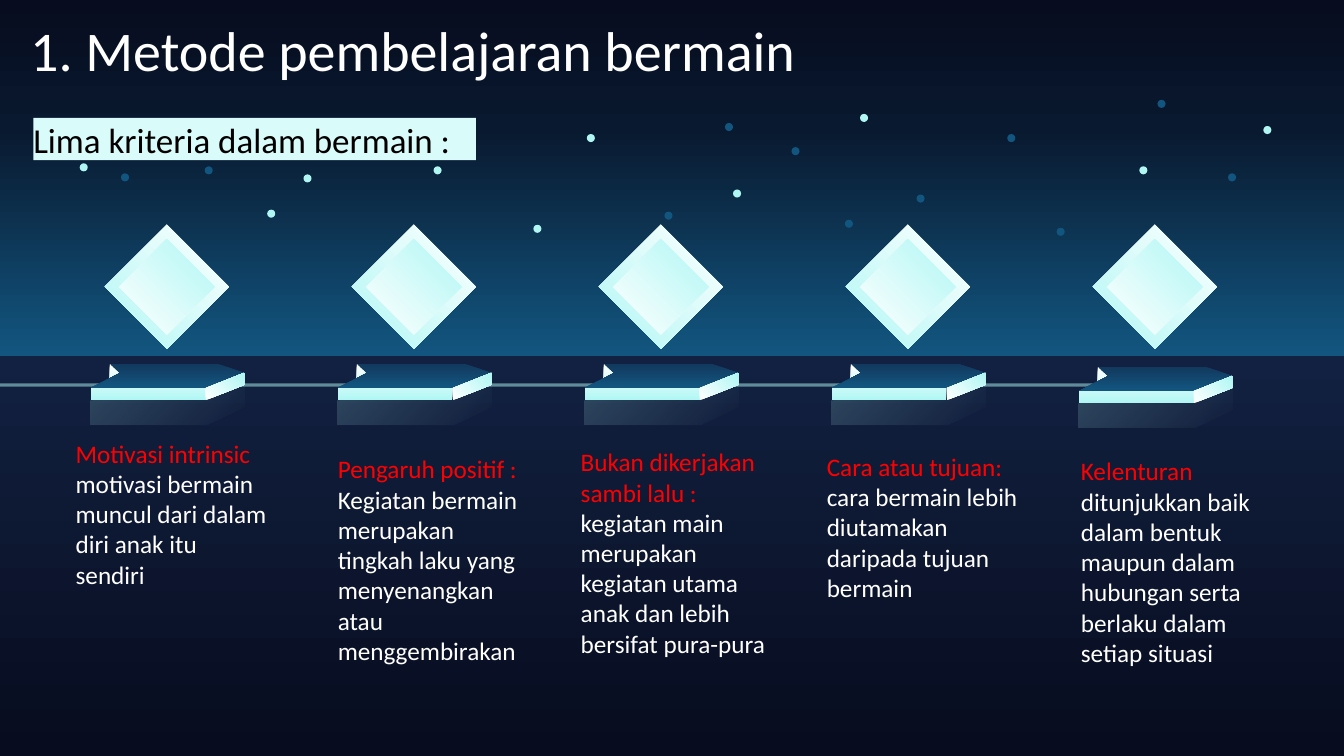
from lxml import etree
from pptx import Presentation
from pptx.dml.color import RGBColor
from pptx.enum.shapes import MSO_CONNECTOR, MSO_SHAPE
from pptx.enum.text import MSO_ANCHOR, MSO_AUTO_SIZE, PP_ALIGN
from pptx.oxml.ns import qn
from pptx.util import Inches, Pt

RECT, OVAL = MSO_SHAPE.RECTANGLE, MSO_SHAPE.OVAL
STRAIGHT = MSO_CONNECTOR.STRAIGHT
MIDDLE, LEFT, GROW = MSO_ANCHOR.MIDDLE, PP_ALIGN.LEFT, MSO_AUTO_SIZE.SHAPE_TO_FIT_TEXT

WHITE, BLACK, RED = "FFFFFF", "000000", "FF0000"
AQUA, PALE, BLUE, NAVY = "B0F7F4", "D9FBFA", "125680", "070C1E"
ICE = [(0, WHITE), (100, AQUA)]


def rgb(value):
    return RGBColor.from_string(value)


def add_alpha(clr, percent):
    etree.SubElement(clr, qn("a:alpha"), val=str(percent * 1000))


class Deck:
    font = "Calibri"

    def __init__(self, prs):
        self.s = prs.slides.add_slide(prs.slide_layouts[6])
        self.shapes = self.s.shapes

    def group(self):
        """Send the next shapes to a new group."""
        self.shapes = self.s.shapes.add_group_shape().shapes

    def ungroup(self):
        self.shapes = self.s.shapes

    def paint(self, sp, fill, angle=90):
        """Fill with a colour, or with gradient stops at a clockwise angle."""
        sp.shadow.inherit = False
        sp.line.fill.background()
        if isinstance(fill, str):
            sp.fill.solid()
            sp.fill.fore_color.rgb = rgb(fill)
            return
        sp.fill.gradient()
        sp.fill.gradient_angle = (360 - angle) % 360
        stops = sp._element.spPr.find(qn("a:gradFill")).find(qn("a:gsLst"))
        for old in list(stops):
            stops.remove(old)
        for pos, color, *alpha in fill:
            gs = etree.SubElement(stops, qn("a:gs"), pos=str(pos * 1000))
            clr = etree.SubElement(gs, qn("a:srgbClr"), val=color)
            for percent in alpha:
                add_alpha(clr, percent)

    def shape(self, kind, x, y, w, h, fill, angle=90, rotation=0):
        sp = self.shapes.add_shape(kind, Inches(x), Inches(y), Inches(w), Inches(h))
        sp.rotation = rotation
        self.paint(sp, fill, angle)
        return sp

    def outline(self, x, y, points, fill, angle):
        """Closed polygon whose points are offsets from (x, y)."""
        pts = [(Inches(x + dx), Inches(y + dy)) for dx, dy in points]
        fb = self.shapes.build_freeform(*pts[0])
        fb.add_line_segments(pts[1:], close=True)
        self.paint(fb.convert_to_shape(), fill, angle)

    def line(self, x1, y1, x2, y2, color, width, opacity):
        c = self.shapes.add_connector(STRAIGHT, Inches(x1), Inches(y1), Inches(x2), Inches(y2))
        c.line.color.rgb, c.line.width = rgb(color), Pt(width)
        spPr = c._element.spPr
        add_alpha(next(spPr.iter(qn("a:srgbClr"))), opacity)
        etree.SubElement(spPr, qn("a:effectLst"))

    def put_text(self, sp, paragraphs, size):
        """Each paragraph is a list of (text, colour) runs."""
        tf = sp.text_frame
        frame = dict(word_wrap=True, auto_size=GROW, vertical_anchor=MIDDLE,
                     margin_left=0, margin_right=0, margin_top=0, margin_bottom=0)
        for name, value in frame.items():
            setattr(tf, name, value)
        for i, runs in enumerate(paragraphs):
            p = tf.add_paragraph() if i else tf.paragraphs[0]
            p.alignment = LEFT
            for text, color in runs:
                r = p.add_run()
                r.text = text
                for name, value in dict(name=self.font, size=Pt(size)).items():
                    setattr(r.font, name, value)
                r.font.color.rgb = rgb(color)

    def text(self, x, y, w, h, paragraphs, size):
        sp = self.shapes.add_textbox(Inches(x), Inches(y), Inches(w), Inches(h))
        self.put_text(sp, paragraphs, size)


STARS = {
    AQUA: [(2.65, 2.08), (5.29, 2.23), (5.82, 1.33), (0.79, 1.62), (3.01, 1.73), (4.3, 1.65),
           (12.53, 1.25), (7.27, 1.88), (11.3, 1.65), (8.53, 1.13)],
    BLUE: [(2.03, 1.65), (8.38, 2.18), (6.59, 2.1), (10.48, 2.26), (1.2, 1.72), (7.19, 1.22),
           (12.18, 1.72), (11.48, 0.99), (9.99, 1.33), (7.85, 1.46), (9.09, 1.93)],
}

# Faces of a platform: points, gradient stops, angle
PLATFORM = [
    ([(1.52, 0.21), (1.52, 0.42), (1.14, 0.6), (0, 0.6), (0, 0.36)],
     [(0, AQUA, 0), (100, AQUA, 20)], 225),
    ([(0.19, 0), (0.19, 0.16), (0, 0.24), (0, 0.36), (1.14, 0.36), (1.14, 0.24)], ICE, 90),
    ([(0.19, 0), (1.26, 0), (1.52, 0.09), (1.14, 0.24), (0, 0.24), (0.29, 0.09)],
     [(0, "12395E"), (100, BLUE)], 90),
    ([(1.52, 0.09), (1.52, 0.21), (1.14, 0.36), (1.14, 0.24)], ICE, 315),
]

# Platform top, text left, text top, text height, paragraphs
CRITERIA = [
    (3.61, 0.75, 4.34, 1.51, [
        [("Motivasi intrinsic", RED)],
        [("motivasi bermain muncul dari dalam diri anak itu sendiri", WHITE)]]),
    (3.61, 3.35, 4.49, 2.12, [
        [("Pengaruh positif : ", RED),
         ("Kegiatan bermain merupakan tingkah laku yang menyenangkan atau menggembirakan", WHITE)]]),
    (3.61, 5.76, 4.42, 2.12, [
        [("Bukan dikerjakan sambi lalu : ", RED),
         ("kegiatan main merupakan kegiatan utama anak dan lebih bersifat pura-pura", WHITE)]]),
    (3.61, 8.2, 4.47, 1.51, [
        [("Cara atau tujuan:", RED)],
        [("cara bermain lebih diutamakan daripada tujuan bermain", WHITE)]]),
    (3.64, 10.72, 4.51, 2.12, [
        [("Kelenturan ", RED),
         ("ditunjukkan baik dalam bentuk maupun dalam hubungan serta berlaku dalam setiap situasi",
          WHITE)]]),
]
PITCH = 2.45


def main():
    prs = Presentation()
    prs.slide_width, prs.slide_height = Inches(13.33), Inches(7.5)
    d = Deck(prs)

    d.shape(RECT, 0, 0, 13.33, 3.54, [(0, NAVY), (36, "09192F"), (100, BLUE)])
    d.shape(RECT, 0, 3.53, 13.33, 3.97, [(0, "122141"), (100, NAVY)])
    d.line(0, 3.82, 11.48, 3.82, AQUA, 2.25, 50)

    d.group()
    for color, places in STARS.items():
        for x, y in places:
            d.shape(OVAL, x, y, 0.08, 0.08, color)
    d.ungroup()

    d.text(0.3, 0.15, 8.51, 0.67, [[("1. Metode pembelajaran bermain", WHITE)]], 40)
    label = d.shape(RECT, 0.33, 1.17, 4.39, 0.42, PALE)
    d.put_text(label, [[("Lima kriteria dalam bermain :", BLACK)]], 25)

    for i, (top, text_x, text_y, text_h, paragraphs) in enumerate(CRITERIA):
        x = 0.9 + i * PITCH
        d.group()
        for points, stops, angle in PLATFORM:
            d.outline(x, top, points, stops, angle)
        d.group()
        d.shape(RECT, x + 0.32, 2.41, 0.87, 0.87, ICE, 90, rotation=45)
        d.shape(RECT, x + 0.42, 2.51, 0.67, 0.67, ICE, 270, rotation=45)
        d.ungroup()
        d.text(text_x, text_y, 1.92, text_h, paragraphs, 18)

    prs.save("out.pptx")


if __name__ == "__main__":
    main()
